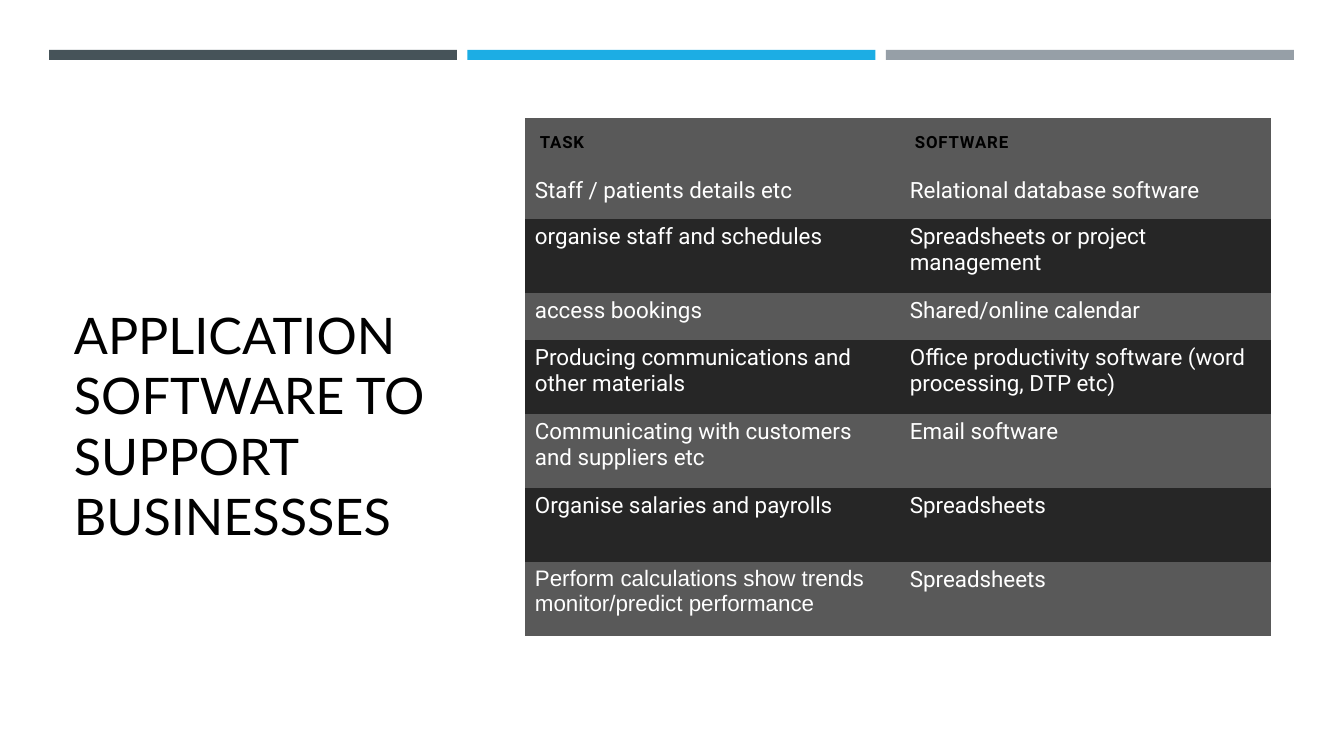
from pptx import Presentation
from pptx.dml.color import RGBColor
from pptx.enum.shapes import MSO_SHAPE as Shape
from pptx.enum.text import MSO_ANCHOR as Anchor
from pptx.util import Pt

# Content
TITLE = "APPLICATION SOFTWARE TO SUPPORT BUSINESSSES"
HEADINGS = ("TASK", "SOFTWARE")
TASKS = [  # task, software, row height in px
    ("Staff / patients details etc", "Relational database software", 46),
    ("organise staff and schedules", "Spreadsheets or project management", 74),
    ("access bookings", "Shared/online calendar", 47),
    ("Producing communications and other materials",
     "Office productivity software (word processing, DTP etc)", 74),
    ("Communicating with customers and suppliers etc", "Email software", 74),
    ("Organise salaries and payrolls", "Spreadsheets", 74),
    ("Perform calculations show trends\nmonitor/predict performance",
     "Spreadsheets", 74),
]
ARIAL_TASK = TASKS[-1][0]
BAR_COLOURS = ("465359", "1CADE4", "969FA7")
ROW_COLOURS = ("595959", "262626")

# Layout in px
SLIDE_W, SLIDE_H = 1344, 756
BAR_LEFT, BAR_TOP, BAR_W, BAR_H, BAR_STEP = 49, 50, 408, 10, 418.5
TITLE_BOX = (64, 168, 376, 383)
TABLE_LEFT, TABLE_TOP = 525, 118
COLUMN_WIDTHS = (375, 371)
HEADING_H = 55
HEADING_INSETS = (15, 15, 15, 15)
TASK_INSETS = (10, 5, 10, 10)
NO_GRID_STYLE = "{2D5ABB26-0587-4C30-8999-92F81FD0307C}"


def px(length):
    return round(length * 12192000 / SLIDE_W)


def paint(fill, colour):
    fill.solid()
    fill.fore_color.rgb = RGBColor.from_string(colour)


def style_text(frame, size, font, colour, bold=False, spacing=0):
    for paragraph in frame.paragraphs:
        for run in paragraph.runs:
            run.font.size = Pt(size)
            run.font.name = font
            run.font.bold = bold
            run.font.color.rgb = RGBColor.from_string(colour)
            if spacing:
                run.font._element.set("spc", str(spacing))


def fill_cell(cell, text, insets, colour):
    cell.text_frame.text = text
    cell.margin_left, cell.margin_top, cell.margin_right, cell.margin_bottom = map(px, insets)
    cell.vertical_anchor = Anchor.TOP
    paint(cell.fill, colour)


def add_bars(slide):
    for i, colour in enumerate(BAR_COLOURS):
        bar = slide.shapes.add_shape(
            Shape.RECTANGLE, px(BAR_LEFT + i * BAR_STEP), px(BAR_TOP), px(BAR_W), px(BAR_H))
        bar.shadow.inherit = False
        paint(bar.fill, colour)
        bar.line.fill.background()


def add_title(slide):
    title = slide.shapes.add_textbox(*map(px, TITLE_BOX)).text_frame
    title.word_wrap = True
    title.vertical_anchor = Anchor.BOTTOM
    title.text = TITLE
    style_text(title, 36, "Lato", "000000")


def add_task_table(slide):
    heights = [HEADING_H] + [height for _, _, height in TASKS]
    frame = slide.shapes.add_table(
        len(heights), len(HEADINGS), px(TABLE_LEFT), px(TABLE_TOP),
        px(sum(COLUMN_WIDTHS)), px(sum(heights)))
    frame.element.xpath(".//a:tableStyleId")[0].text = NO_GRID_STYLE
    table = frame.table
    table.first_row = table.horz_banding = False
    for column, width in zip(table.columns, COLUMN_WIDTHS):
        column.width = px(width)
    for row, height in zip(table.rows, heights):
        row.height = px(height)

    # Heading row
    for c, heading in enumerate(HEADINGS):
        cell = table.cell(0, c)
        fill_cell(cell, heading, HEADING_INSETS, ROW_COLOURS[0])
        style_text(cell.text_frame, 12, "Roboto", "000000", bold=True, spacing=60)

    # Task rows in alternating greys
    for r, (task, software, _) in enumerate(TASKS):
        for c, text in enumerate((task, software)):
            cell = table.cell(r + 1, c)
            fill_cell(cell, text, TASK_INSETS, ROW_COLOURS[r % 2])
            font = "Arial" if text == ARIAL_TASK else "Roboto"
            style_text(cell.text_frame, 16, font, "FFFFFF")


def main():
    deck = Presentation()
    deck.slide_width, deck.slide_height = px(SLIDE_W), px(SLIDE_H)
    slide = deck.slides.add_slide(deck.slide_layouts[6])
    paint(slide.background.fill, "FFFFFF")
    add_bars(slide)
    add_title(slide)
    add_task_table(slide)
    deck.save("out.pptx")


if __name__ == "__main__":
    main()
